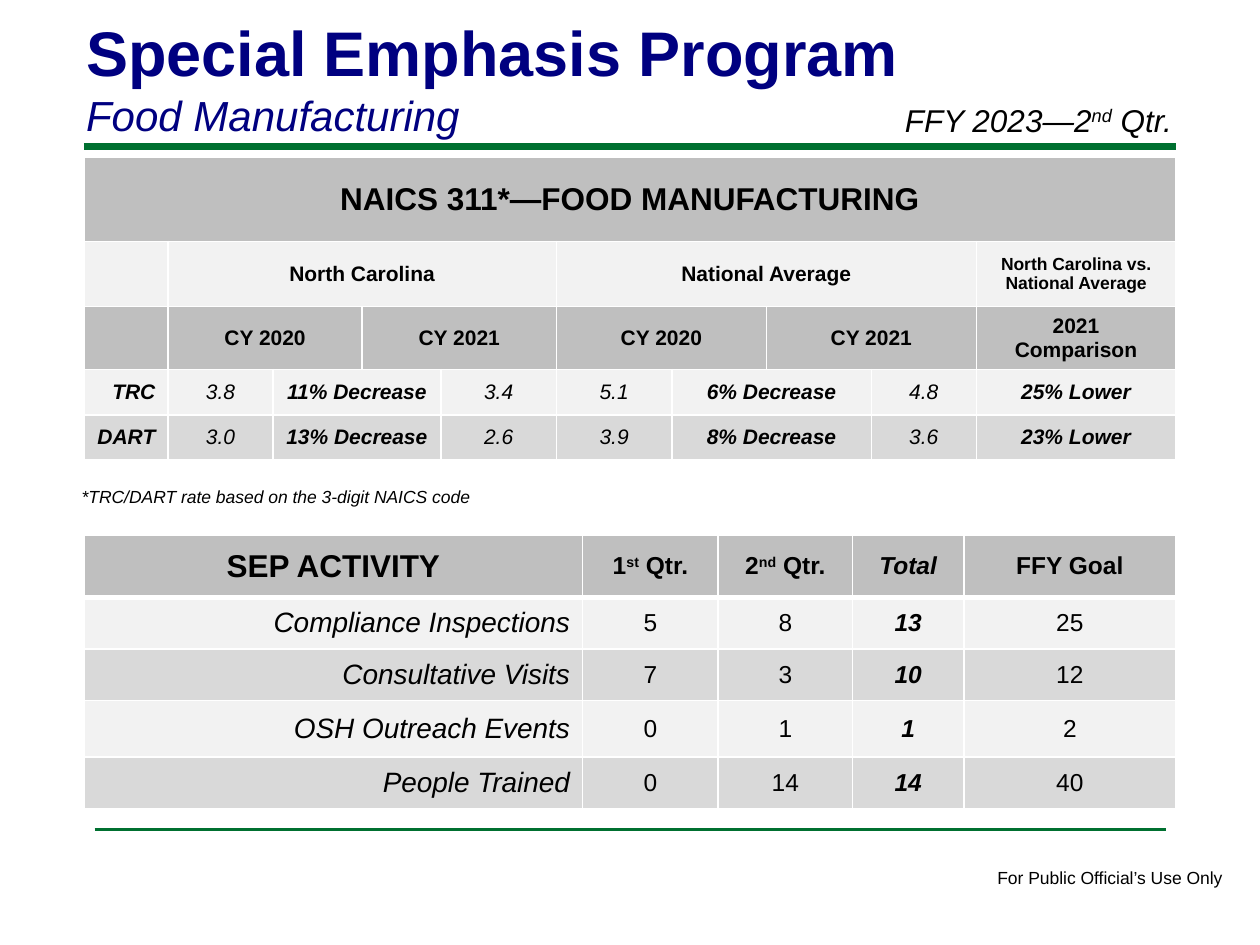
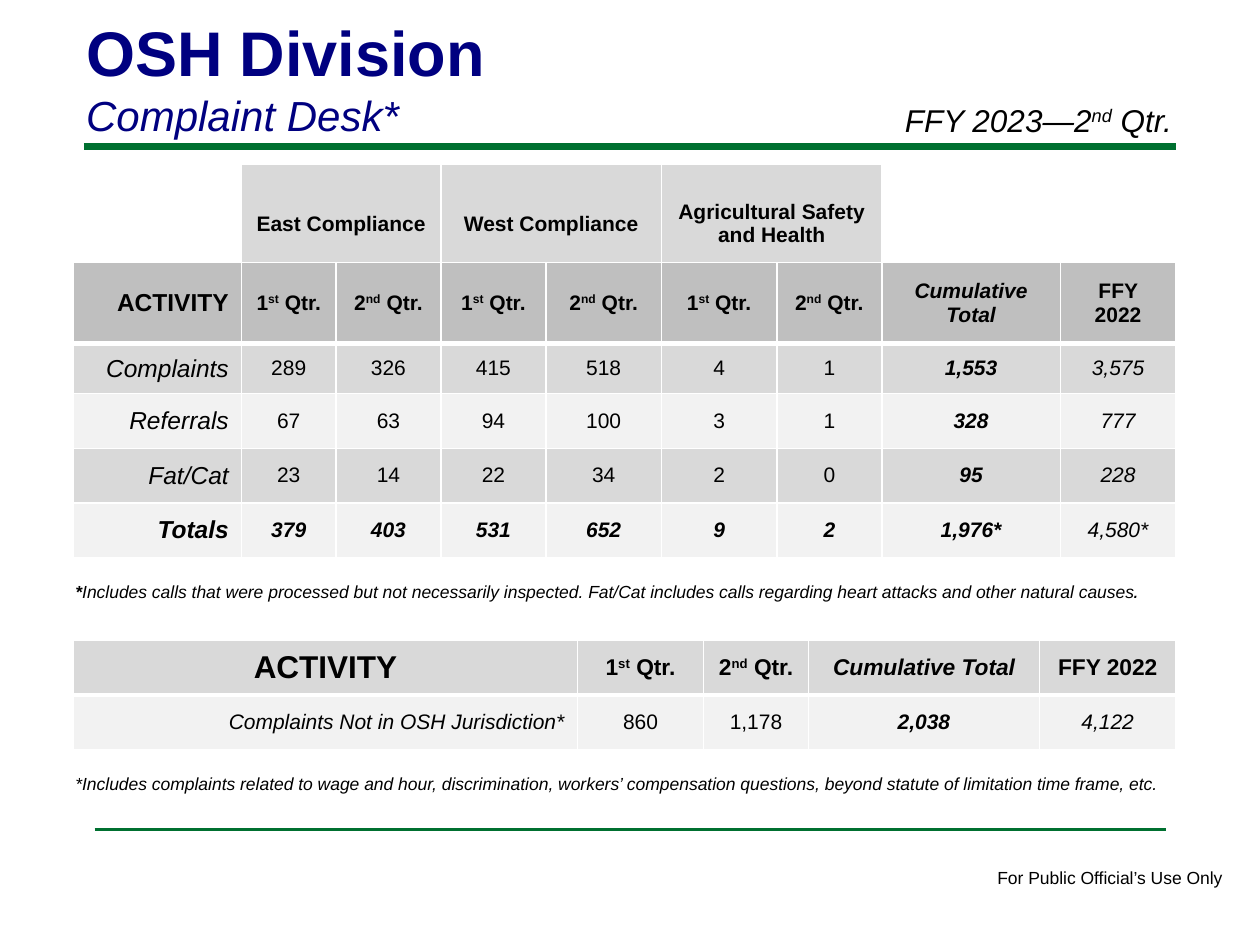
"""Build the two quarterly report slides: food manufacturing programme and complaint desk."""
from lxml.etree import SubElement
from pptx import Presentation
from pptx.dml.color import RGBColor
from pptx.enum.shapes import MSO_CONNECTOR
from pptx.enum.text import MSO_ANCHOR, MSO_AUTO_SIZE, PP_ALIGN
from pptx.oxml.ns import qn
from pptx.util import Pt

PX = 7620
FONT = "Arial"
BLACK = RGBColor(0x00, 0x00, 0x00)
WHITE = RGBColor(0xFF, 0xFF, 0xFF)
NAVY = RGBColor(0x00, 0x00, 0x80)
GREEN = RGBColor(0x00, 0x70, 0x30)
DARK = RGBColor(0xBF, 0xBF, 0xBF)
MID = RGBColor(0xD9, 0xD9, 0xD9)
LIGHT = RGBColor(0xF2, 0xF2, 0xF2)
Q1, Q2 = "1^st^ Qtr.", "2^nd^ Qtr."


def write(p, text, size=10, bold=False, italic=False, color=BLACK, align=PP_ALIGN.LEFT):
    """Append text to a paragraph; parts between ^ marks are superscript."""
    p.alignment = align
    for i, part in enumerate(text.split("^")):
        r = p.add_run()
        r.text = part
        r.font.name, r.font.size = FONT, Pt(size)
        r.font.bold, r.font.italic = bold, italic
        r.font.color.rgb = color
        if i % 2:
            r._r.get_or_add_rPr().set("baseline", "30000")


def add_grid(s, x, y, cols, rows):
    """Add a table; a row is (height, fill, bottom line, styles, texts), None continues a span."""
    heights = [row[0] for row in rows]
    frame = s.shapes.add_table(len(rows), len(cols), x * PX, y * PX,
                               sum(cols) * PX, sum(heights) * PX)
    table = frame.table
    table.first_row = table.horz_banding = False
    for col, width in zip(table.columns, cols):
        col.width = width * PX
    top = 1
    for i, (height, fill, bottom, styles, texts) in enumerate(rows):
        table.rows[i].height = height * PX
        for j, (style, text) in enumerate(zip(styles.split(), texts)):
            cell = table.cell(i, j)
            tcPr = cell._tc.get_or_add_tcPr()
            for side, width in (("L", 1), ("R", 1), ("T", top), ("B", bottom)):
                ln = SubElement(tcPr, qn(f"a:ln{side}"), w=str(Pt(width)))
                SubElement(SubElement(ln, qn("a:solidFill")), qn("a:srgbClr"), val=str(WHITE))
            cell.fill.solid()
            cell.fill.fore_color.rgb = fill
            cell.vertical_anchor = MSO_ANCHOR.MIDDLE
            if text:
                write(cell.text_frame.paragraphs[0], text, size=int(style[:2]),
                      bold="b" in style, italic="i" in style,
                      align=PP_ALIGN.RIGHT if "r" in style else PP_ALIGN.CENTER)
                end = j
                while end + 1 < len(texts) and texts[end + 1] is None:
                    end += 1
                if end > j:
                    cell.merge(table.cell(i, end))
        top = bottom


prs = Presentation()
prs.slide_width, prs.slide_height = 1200 * PX, 900 * PX

boxes = []
slides = []
for title, subtitle in (("Special Emphasis Program", "Food Manufacturing"),
                        ("OSH Division", "Complaint Desk*")):
    s = prs.slides.add_slide(prs.slide_layouts[5])
    slides.append(s)
    for x1, x2, y, width in ((80, 1120, 140, 4), (90, 1110, 790, 2)):
        line = s.shapes.add_connector(MSO_CONNECTOR.STRAIGHT, x1 * PX, y * PX, x2 * PX, y * PX)
        line.line.color.rgb = GREEN
        line.line.width = Pt(width)
        SubElement(line._element.spPr, qn("a:effectLst"))
    sp = s.shapes.title
    sp.left, sp.top, sp.width, sp.height = 70 * PX, 7 * PX, 990 * PX, 133 * PX
    tf = sp.text_frame
    tf.auto_size = MSO_AUTO_SIZE.NONE
    tf.vertical_anchor = MSO_ANCHOR.TOP
    write(tf.paragraphs[0], title, size=36, bold=True, color=NAVY)
    write(tf.add_paragraph(), subtitle, size=24, italic=True, color=NAVY)
    boxes += [
        (s, 938, 820, 241, 32, False, [("For Public Official’s Use Only", {})]),
        (s, 850, 90, 300, 48, True, [("FFY 2023—2^nd^ Qtr.", dict(size=18, italic=True))]),
    ]

food, desk = slides
italic = dict(italic=True)
boxes += [
    (food, 66, 457, 406, 32, False, [("*TRC/DART rate based on the 3-digit NAICS code", italic)]),
    (desk, 60, 544, 1060, 60, True, [
        ("*", dict(bold=True, italic=True)),
        ("Includes calls that were processed but not necessarily inspected. "
         "Fat/Cat includes calls regarding heart attacks and other natural causes", italic),
        (".", dict(size=12, italic=True))]),
    (desk, 60, 730, 1070, 32, True, [
        ("*Includes complaints related to wage and hour, discrimination, workers’ compensation "
         "questions, beyond statute of limitation time frame, etc.", italic)]),
]
for s, x, y, w, h, wrap, runs in boxes:
    tf = s.shapes.add_textbox(x * PX, y * PX, w * PX, h * PX).text_frame
    tf.word_wrap = wrap
    for text, fmt in runs:
        write(tf.paragraphs[0], text, **fmt)

rate = "12bir 12i 12bi 12bi 12i 12i 12bi 12bi 12i 12bi"
add_grid(food, 80, 150, [80, 100, 85, 75, 110, 110, 90, 100, 100, 190], [
    (80, DARK, 1, "18b " * 10, ["NAICS 311*—FOOD MANUFACTURING"] + [None] * 9),
    (62, LIGHT, 1, "12b " * 9 + "10b", ["", "North Carolina", None, None, None,
                                        "National Average", None, None, None,
                                        "North Carolina vs. National Average"]),
    (58, DARK, 1, "12b " * 10, ["", *["CY 2020", None, "CY 2021", None] * 2, "2021 Comparison"]),
    (43, LIGHT, 1, rate, ["TRC", "3.8", "11% Decrease", None, "3.4",
                          "5.1", "6% Decrease", None, "4.8", "25% Lower"]),
    (43, MID, 1, rate, ["DART", "3.0", "13% Decrease", None, "2.6",
                        "3.9", "8% Decrease", None, "3.6", "23% Lower"]),
])

count = "16ir 14 14 14bi 14"
add_grid(food, 80, 510, [475, 129, 128, 106, 202], [
    (59, DARK, 3, "18b 14b 14b 14bi 14b", ["SEP ACTIVITY", Q1, Q2, "Total", "FFY Goal"]),
    (49, LIGHT, 1, count, ["Compliance Inspections", "5", "8", "13", "25"]),
    (49, MID, 1, count, ["Consultative Visits", "7", "3", "10", "12"]),
    (54, LIGHT, 1, count, ["OSH Outreach Events", "0", "1", "1", "2"]),
    (49, MID, 1, count, ["People Trained", "0", "14", "14", "40"]),
])

add_grid(desk, 230, 156, [190, 210, 210], [
    (114, MID, 3, "12b " * 3,
     ["East Compliance", "West Compliance", "Agricultural Safety and Health"]),
])

calls = "14ir " + "12 " * 6 + "12bi 12i"
add_grid(desk, 70, 250, [160, 90, 100, 100, 110, 110, 100, 170, 110], [
    (77, DARK, 3, "14br " + "12b " * 6 + "12bi 12b",
     ["ACTIVITY", *[Q1, Q2] * 3, "Cumulative Total", "FFY 2022"]),
    (48, MID, 1, calls, ["Complaints", "289", "326", "415", "518", "4", "1", "1,553", "3,575"]),
    (52, LIGHT, 1, calls, ["Referrals", "67", "63", "94", "100", "3", "1", "328", "777"]),
    (52, MID, 1, calls, ["Fat/Cat", "23", "14", "22", "34", "2", "0", "95", "228"]),
    (52, LIGHT, 1, "14bir " + "12bi " * 7 + "12i",
     ["Totals", "379", "403", "531", "652", "9", "2", "1,976*", "4,580*"]),
])

add_grid(desk, 70, 610, [480, 120, 100, 220, 130], [
    (52, MID, 3, "18b 13b 13b 13bi 13b", ["ACTIVITY", Q1, Q2, "Cumulative Total", "FFY 2022"]),
    (52, LIGHT, 1, "12ir 12 12 12bi 12i",
     ["Complaints Not in OSH Jurisdiction*", "860", "1,178", "2,038", "4,122"]),
])

prs.save("out.pptx")
